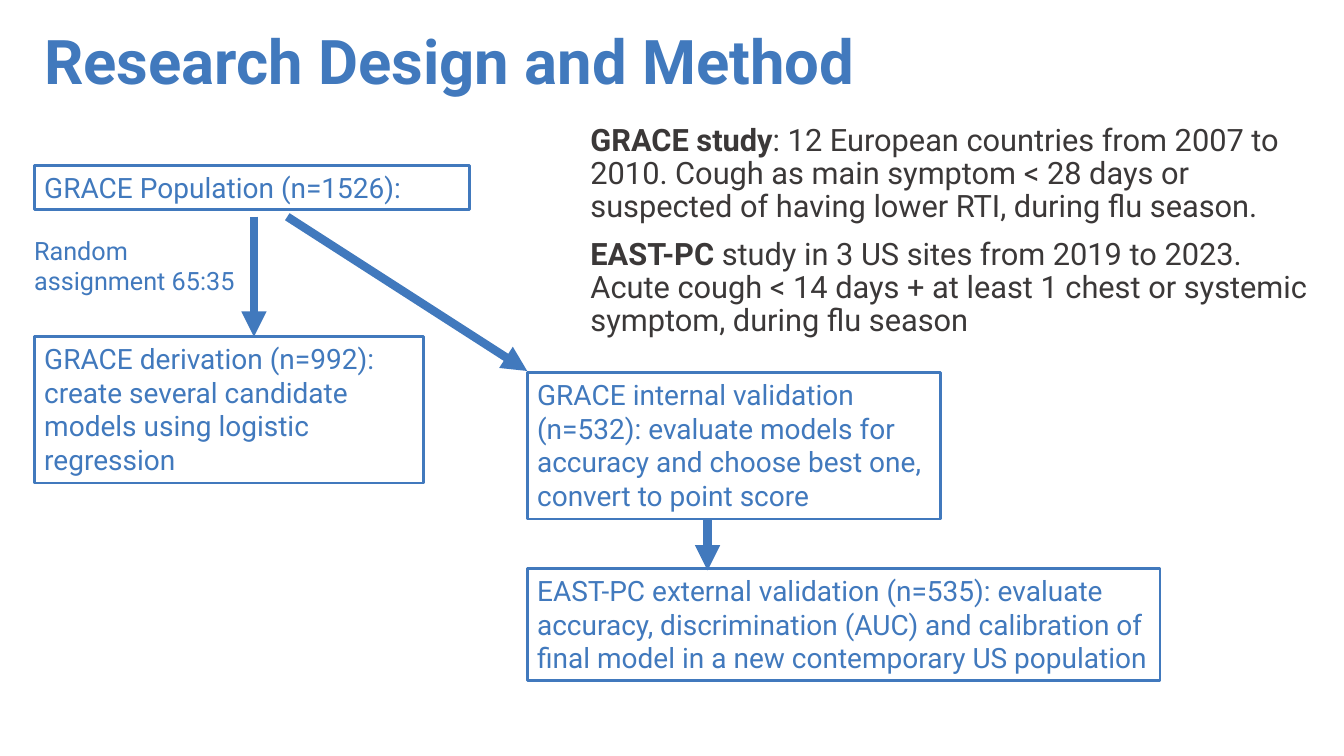
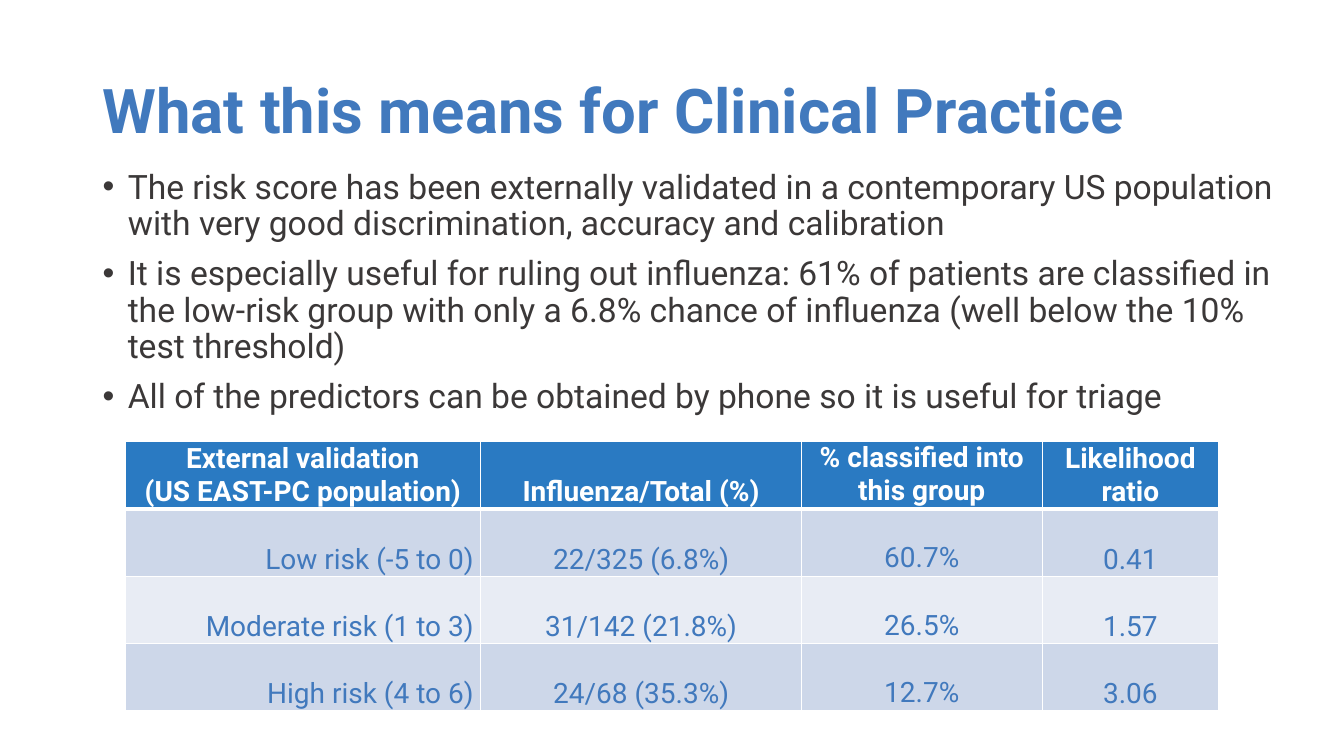
from lxml import etree
from pptx import Presentation
from pptx.dml.color import RGBColor
from pptx.enum import shapes, text
from pptx.oxml import ns
from pptx.util import Pt

BLUE = RGBColor(0x41, 0x79, 0xBD)
DARK = RGBColor(0x3B, 0x38, 0x38)
WHITE = RGBColor(0xFF, 0xFF, 0xFF)
HEADER = RGBColor(0x2A, 0x7A, 0xC2)
BANDS = [RGBColor(0xCD, 0xD7, 0xE9), RGBColor(0xE8, 0xEC, 0xF4)]
FONT = "Roboto"
CENTER, RIGHT = text.PP_ALIGN.CENTER, text.PP_ALIGN.RIGHT
TOP, MIDDLE, BOTTOM = (text.MSO_ANCHOR.TOP, text.MSO_ANCHOR.MIDDLE,
                       text.MSO_ANCHOR.BOTTOM)

TITLE_FORMAT = {"size": Pt(44), "bold": True, "color": BLUE}
STUDY_FORMAT = {"size": Pt(22), "color": DARK}
BULLET_FORMAT = {"size": Pt(24), "color": DARK}
STEP_FORMAT = {"size": Pt(20), "color": BLUE}
NOTE_FORMAT = {"size": Pt(18), "color": BLUE}
HEADER_FORMAT = {"size": Pt(20), "bold": True, "color": WHITE}
BODY_SPACING = {"line_spacing": 0.9, "space_before": Pt(10)}

DESIGN_TITLE = ("Research Design and Method", 24.5, -5.8)
STUDIES = [
    [("GRACE study", True),
     (": 12 European countries from 2007 to 2010. Cough as main symptom "
      "< 28 days or suspected of having lower RTI, during flu season.", False)],
    [("EAST-PC", True),
     (" study in 3 US sites from 2019 to 2023. Acute cough < 14 days + "
      "at least 1 chest or systemic symptom, during flu season", False)],
]
STEPS = [
    ("GRACE Population (n=1526):", (24.5, 118.1, 311, 31.5)),
    ("GRACE derivation (n=992): create several candidate models using "
     "logistic regression", (24.5, 240.5, 278, 104.5)),
    ("GRACE internal validation (n=532): evaluate models for accuracy and "
     "choose best one, convert to point score", (376.6, 266.2, 295.2, 104.5)),
    ("EAST-PC external validation (n=535): evaluate accuracy, discrimination "
     "(AUC) and calibration of final model in a new contemporary US "
     "population", (376.6, 406.1, 452, 80)),
]
ASSIGNMENT = ("Random assignment 65:35", (17.3, 164.2, 163.4, 51))
ARROWS = [
    (181.4, 154.8, 181.4, 240.5),
    (205.2, 154.8, 376.6, 265),
    (505.4, 371.5, 505.4, 407.5),
]

PRACTICE_TITLE = ("What this means for Clinical Practice", 66.2, 28.8)
FINDINGS = [
    "The risk score has been externally validated in a contemporary US "
    "population with very good discrimination, accuracy and calibration",
    "It is especially useful for ruling out influenza: 61% of patients are "
    "classified in the low-risk group with only a 6.8% chance of influenza "
    "(well below the 10% test threshold)",
    "All of the predictors can be obtained by phone so it is useful for triage",
]
RISK_ROWS = [
    ("External validation\v(US EAST-PC population)", "Influenza/Total (%)",
     "% classified into this group", "Likelihood ratio"),
    ("Low risk (-5 to 0)", "22/325 (6.8%)", "60.7%", "0.41"),
    ("Moderate risk (1 to 3)", "31/142 (21.8%)", "26.5%", "1.57"),
    ("High risk (4 to 6)", "24/68 (35.3%)", "12.7%", "3.06"),
]
COLUMN_WIDTHS = [254.2, 229, 172, 126]
ROW_HEIGHTS = [45, 46, 46, 46]


def points(values):
    return [Pt(value) for value in values]


def apply_format(target, values):
    for name, value in values.items():
        setattr(target, name, value)


def style_runs(paragraph, values):
    for run in paragraph.runs:
        run.font.name = FONT
        for name, value in values.items():
            if name == "color":
                run.font.color.rgb = value
            else:
                setattr(run.font, name, value)


def add_bullet(paragraph):
    properties = paragraph._p.get_or_add_pPr()
    properties.set("marL", str(Pt(18)))
    properties.set("indent", str(-Pt(18)))
    etree.SubElement(properties, ns.qn("a:buFont"), typeface="Arial")
    etree.SubElement(properties, ns.qn("a:buChar"), char="•")


def fill_text(frame, paragraphs, font, spacing=None, bulleted=False):
    frame.word_wrap = True
    for index, parts in enumerate(paragraphs):
        paragraph = frame.add_paragraph() if index else frame.paragraphs[0]
        paragraph.alignment = text.PP_ALIGN.LEFT
        apply_format(paragraph, spacing or {})
        if not index:
            paragraph.space_before = Pt(0)
        if bulleted:
            add_bullet(paragraph)
        for wording, bold in parts:
            run = paragraph.add_run()
            run.text = wording
            run.font.bold = bold
        style_runs(paragraph, font)


def add_text(slide, bounds, paragraphs, font, **options):
    frame = slide.shapes.add_textbox(*points(bounds)).text_frame
    fill_text(frame, paragraphs, font, **options)
    return frame


def add_titled_slide(presentation, title, left, top):
    slide = presentation.slides.add_slide(presentation.slide_layouts[6])
    frame = add_text(slide, (left, top, 828, 104.4), [[(title, True)]],
                     TITLE_FORMAT, spacing={"line_spacing": 0.9})
    frame.vertical_anchor = MIDDLE
    return slide


def add_step(slide, wording, bounds):
    shape = slide.shapes.add_shape(shapes.MSO_SHAPE.RECTANGLE, *points(bounds))
    shape.shadow.inherit = False
    shape.fill.background()
    shape.line.color.rgb = BLUE
    shape.line.width = Pt(2)
    shape.text_frame.vertical_anchor = TOP
    fill_text(shape.text_frame, [[(wording, False)]], STEP_FORMAT)


def add_arrow(slide, ends):
    arrow = slide.shapes.add_connector(shapes.MSO_CONNECTOR.STRAIGHT,
                                       *points(ends))
    arrow.line.color.rgb = BLUE
    arrow.line.width = Pt(6)
    etree.SubElement(arrow.line._get_or_add_ln(), ns.qn("a:tailEnd"),
                     type="triangle")
    etree.SubElement(arrow._element.spPr, ns.qn("a:effectLst"))


def add_borders(cell, widths):
    properties = cell._tc.get_or_add_tcPr()
    for side, width in widths.items():
        line = etree.SubElement(properties, ns.qn("a:ln" + side),
                                w=str(Pt(width)))
        fill = etree.SubElement(line, ns.qn("a:solidFill"))
        etree.SubElement(fill, ns.qn("a:srgbClr"), val=str(WHITE))


def add_risk_table(slide, left, top):
    bounds = (left, top, sum(COLUMN_WIDTHS), sum(ROW_HEIGHTS))
    table = slide.shapes.add_table(len(RISK_ROWS), len(COLUMN_WIDTHS),
                                   *points(bounds)).table
    for column, width in zip(table.columns, COLUMN_WIDTHS):
        column.width = Pt(width)
    for row_index, (row, height) in enumerate(zip(RISK_ROWS, ROW_HEIGHTS)):
        table.rows[row_index].height = Pt(height)
        heading = row_index == 0
        for column_index, wording in enumerate(row):
            cell = table.cell(row_index, column_index)
            add_borders(cell, {"L": 1, "R": 1,
                               "T": 3 if row_index == 1 else 1,
                               "B": 3 if heading else 1})
            cell.fill.solid()
            cell.fill.fore_color.rgb = (
                HEADER if heading else BANDS[(row_index - 1) % 2])
            apply_format(cell, {
                "margin_left": Pt(5), "margin_right": Pt(5),
                "margin_top": 0, "margin_bottom": 0,
                "vertical_anchor": TOP if column_index == 2 else BOTTOM})
            paragraph = cell.text_frame.paragraphs[0]
            paragraph.text = wording
            paragraph.alignment = (
                CENTER if heading or column_index else RIGHT)
            paragraph.line_spacing = 1.0 if heading else 2.0
            style_runs(paragraph, HEADER_FORMAT if heading else STEP_FORMAT)


def build_design(presentation):
    slide = add_titled_slide(presentation, *DESIGN_TITLE)
    add_text(slide, (414.7, 85.7, 537.1, 164), STUDIES, STUDY_FORMAT,
             spacing=BODY_SPACING)
    for wording, bounds in STEPS:
        add_step(slide, wording, bounds)
    wording, bounds = ASSIGNMENT
    add_text(slide, bounds, [[(wording, False)]], NOTE_FORMAT)
    for ends in ARROWS:
        add_arrow(slide, ends)


def build_practice(presentation):
    slide = add_titled_slide(presentation, *PRACTICE_TITLE)
    add_text(slide, (66.2, 118.1, 858.2, 190),
             [[(finding, False)] for finding in FINDINGS], BULLET_FORMAT,
             spacing=BODY_SPACING, bulleted=True)
    add_risk_table(slide, 89.3, 315.4)


def main():
    presentation = Presentation()
    presentation.slide_width = Pt(960)
    presentation.slide_height = Pt(540)
    build_design(presentation)
    build_practice(presentation)
    presentation.save("out.pptx")


if __name__ == "__main__":
    main()
